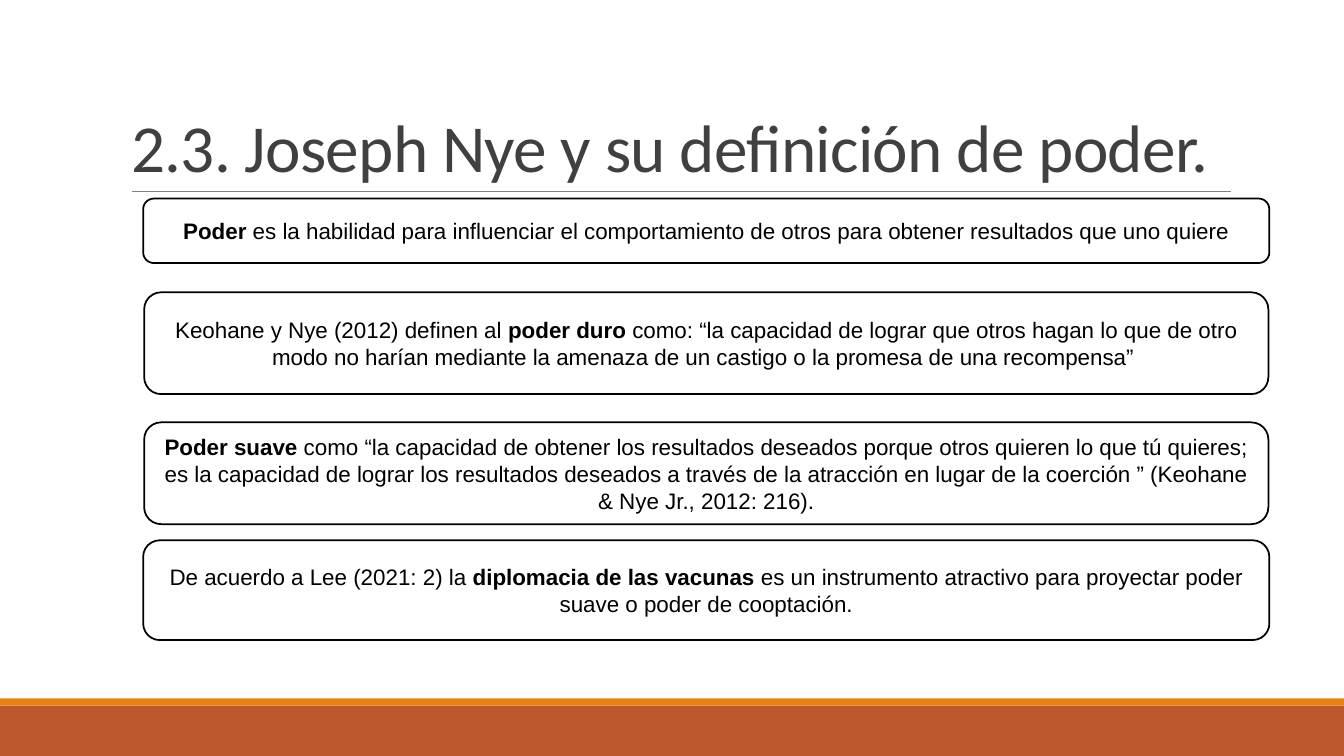
import pptx
import pptx.util
import pptx.dml.color
import pptx.enum.shapes
import pptx.enum.text
import lxml.etree
from dataclasses import dataclass

PX = 9144  # EMU in one px, 100 px to the inch
SHAPE = pptx.enum.shapes.MSO_SHAPE
ALIGN = pptx.enum.text.PP_ALIGN
ANCHOR = pptx.enum.text.MSO_ANCHOR


@dataclass(frozen=True)
class Theme:
    ink: str = "000000"
    title: str = "404040"
    rule: str = "808080"
    band: str = "BD582C"
    strip: str = "E48312"
    head: str = "Calibri"
    body: str = "Arial"
    big: int = 48
    text: int = 16


THEME = Theme()
TITLE = "2.3. Joseph Nye y su definición de poder."

# Each card: left inset, top, height, and runs as (text, bold)
CARDS = [
    (0, 0, 64, [
        ("Poder", True),
        (" es la habilidad para influenciar el comportamiento de otros "
         "para obtener resultados que uno quiere", False)]),
    (1, 93, 101, [
        ("Keohane y Nye (2012) definen al ", False),
        ("poder duro ", True),
        ("como: “la capacidad de lograr que otros hagan lo que de otro modo "
         "no harían mediante la amenaza de un castigo o la promesa de una "
         "recompensa” ", False)]),
    (1, 222, 101, [
        ("Poder suave ", True),
        ("como “la capacidad de obtener los resultados deseados porque otros "
         "quieren lo que tú quieres; es la capacidad de lograr los resultados "
         "deseados a través de la atracción en lugar de la coerción ” "
         "(Keohane & Nye Jr., 2012: 216).", False)]),
    (0, 339, 99, [
        ("De acuerdo a Lee (2021: 2) la ", False),
        ("diplomacia de las vacunas", True),
        (" es un instrumento atractivo para proyectar poder suave o poder "
         "de cooptación.", False)]),
]


def color(code):
    return pptx.dml.color.RGBColor.from_string(code)


def emu(*sizes):
    return [size * PX for size in sizes]


def add_run(para, text, face, size, code, bold=False):
    run = para.add_run()
    run.text = text
    font = run.font
    font.name, font.size, font.bold = face, pptx.util.Pt(size), bold
    font.color.rgb = color(code)
    return run


def add_bar(slide, box, code):
    bar = slide.shapes.add_shape(SHAPE.RECTANGLE, *emu(*box))
    bar.shadow.inherit = False
    bar.fill.solid()
    bar.fill.fore_color.rgb = color(code)
    bar.line.fill.background()


def add_foot(slide, box):
    left, top, width, height = box
    strip = 7
    add_bar(slide, (left, top + strip, width, height - strip), THEME.band)
    add_bar(slide, (left, top, width, strip), THEME.strip)


def add_title(slide, box):
    left, top, width, height = box

    # Rule under the title
    base = top + height
    rule = slide.shapes.add_connector(
        pptx.enum.shapes.MSO_CONNECTOR.STRAIGHT,
        *emu(left + 11, base, left + width + 1, base))
    rule.line.color.rgb = color(THEME.rule)
    rule.line.width = pptx.util.Pt(0.5)
    lxml.etree.SubElement(rule._element.spPr,
                          pptx.oxml.ns.qn("a:effectLst"))

    # Title text
    title = slide.shapes.title
    title.left, title.top, title.width, title.height = emu(*box)
    frame = title.text_frame
    frame.word_wrap = True
    frame.auto_size = pptx.enum.text.MSO_AUTO_SIZE.NONE
    frame.vertical_anchor = ANCHOR.BOTTOM
    para = frame.paragraphs[0]
    para.alignment = ALIGN.LEFT
    para.line_spacing = 0.85
    run = add_run(para, TITLE, THEME.head, THEME.big, THEME.title)
    run._r.get_or_add_rPr().set("spc", "-50")


def add_card(slide, box, runs):
    card = slide.shapes.add_shape(SHAPE.ROUNDED_RECTANGLE, *emu(*box))
    card.shadow.inherit = False
    card.fill.background()
    card.line.color.rgb = color(THEME.ink)
    card.line.width = pptx.util.Pt(1.25)
    frame = card.text_frame
    frame.word_wrap = True
    frame.vertical_anchor = ANCHOR.MIDDLE
    para = frame.paragraphs[0]
    para.alignment = ALIGN.CENTER
    for text, bold in runs:
        add_run(para, text, THEME.body, THEME.text, THEME.ink, bold)


def add_cards(slide, box):
    left, top, width, _ = box
    for inset, drop, height, runs in CARDS:
        place = (left + inset, top + drop, width - 2 * inset, height)
        add_card(slide, place, runs)


def main():
    deck = pptx.Presentation()
    deck.slide_width, deck.slide_height = emu(1333, 750)
    slide = deck.slides.add_slide(deck.slide_layouts.get_by_name("Title Only"))
    add_foot(slide, (0, 693, 1333, 57))
    add_title(slide, (120, 31, 1100, 159))
    add_cards(slide, (142, 197, 1117, 438))
    deck.save("out.pptx")


if __name__ == "__main__":
    main()
